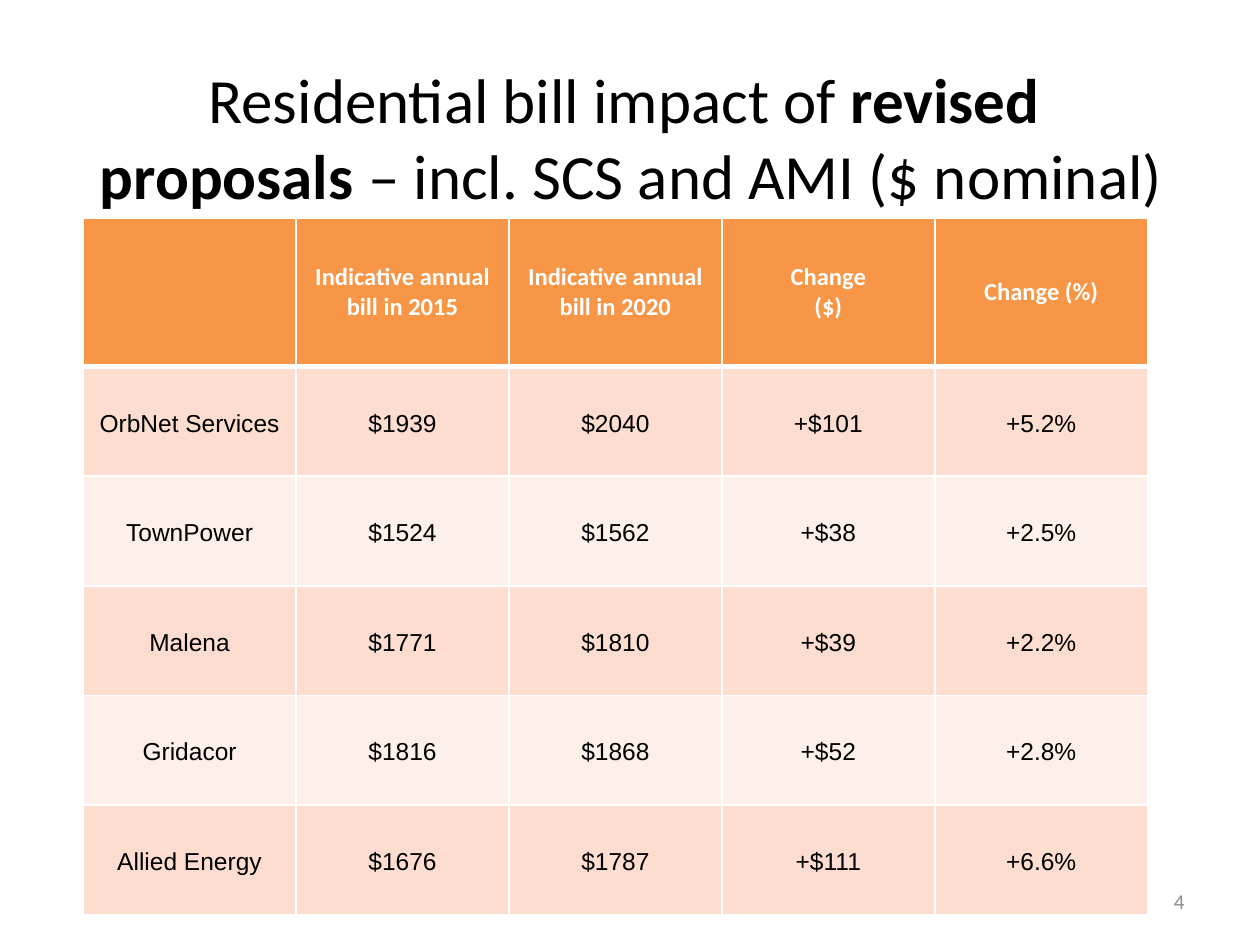
from lxml.etree import SubElement
from pptx import Presentation
from pptx.dml.color import RGBColor
from pptx.enum.text import MSO_ANCHOR as Anchor, PP_ALIGN as Align
from pptx.oxml.ns import qn
from pptx.util import Inches, Pt

COLORS = {
    "text": "000000",
    "white": "FFFFFF",
    "header": "F79646",
    "band_dark": "FCDDCF",
    "band_light": "FDEFE9",
    "page_number": "8C8C8C",
}


def style_paragraph(paragraph, size, font_name, color, align, bold=None):
    paragraph.alignment = align
    font = paragraph.font
    font.size = Pt(size)
    font.name = font_name
    font.bold = bold
    font.color.rgb = RGBColor.from_string(COLORS[color])


def fill_cell(cell, color, bottom_width):
    """Set white borders and a solid fill; the schema wants borders first."""
    properties = cell._tc.get_or_add_tcPr()
    for side, width in (("L", 1), ("R", 1), ("T", 1), ("B", bottom_width)):
        line = SubElement(properties, qn(f"a:ln{side}"), w=str(Pt(width)))
        solid = SubElement(line, qn("a:solidFill"))
        SubElement(solid, qn("a:srgbClr"), val=COLORS["white"])
    cell.fill.solid()
    cell.fill.fore_color.rgb = RGBColor.from_string(COLORS[color])


presentation = Presentation()
presentation.slide_width = Inches(10)
presentation.slide_height = Inches(7.5)
slide = presentation.slides.add_slide(presentation.slide_layouts[6])

# Title, raised by its bottom margin to sit above the table
title = slide.shapes.add_textbox(Inches(0.51), Inches(0.76), Inches(9), Inches(1.25))
title_frame = title.text_frame
title_frame.word_wrap = True
title_frame.vertical_anchor = Anchor.MIDDLE
title_frame.margin_bottom = Inches(0.66)
paragraph = title_frame.paragraphs[0]
style_paragraph(paragraph, 36, "Calibri", "text", Align.CENTER)
paragraph.add_run().text = "Residential bill impact of "
for line in ("revised ", "proposals "):
    run = paragraph.add_run()
    run.text = line
    run.font.bold = True
    if line == "revised ":
        paragraph.add_line_break()
paragraph.add_run().text = "– incl. SCS and AMI ($ nominal)"

# Bill table
rows = [
    ("", "Indicative annual bill in 2015", "Indicative annual bill in 2020",
     "Change\n($)", "Change (%)"),
    ("OrbNet Services", "$1939", "$2040", "+$101", "+5.2%"),
    ("TownPower", "$1524", "$1562", "+$38", "+2.5%"),
    ("Malena", "$1771", "$1810", "+$39", "+2.2%"),
    ("Gridacor", "$1816", "$1868", "+$52", "+2.8%"),
    ("Allied Energy", "$1676", "$1787", "+$111", "+6.6%"),
]
table = slide.shapes.add_table(
    len(rows), len(rows[0]), Inches(0.66), Inches(1.73), Inches(8.46), Inches(5.52)
).table
for column in table.columns:
    column.width = Inches(1.69)

for row_index, values in enumerate(rows):
    is_header = row_index == 0
    table.rows[row_index].height = Inches(1.18 if is_header else 0.87)
    if is_header:
        fill = "header"
    else:
        fill = "band_dark" if row_index % 2 else "band_light"
    for column_index, value in enumerate(values):
        cell = table.cell(row_index, column_index)
        cell.text = value
        cell.vertical_anchor = Anchor.MIDDLE
        fill_cell(cell, fill, 3 if is_header else 1)
        if not is_header:
            cell.margin_left = cell.margin_right = Inches(0.07)
            cell.margin_top = cell.margin_bottom = 0
        for paragraph in cell.text_frame.paragraphs:
            if is_header:
                style_paragraph(paragraph, 14, "Calibri", "white", Align.CENTER, True)
            else:
                style_paragraph(paragraph, 14, "Arial", "text", Align.CENTER, False)
                paragraph.line_spacing = 1.15
                paragraph.space_before = Pt(6)
                paragraph.space_after = Pt(4)

# Page number
number = slide.shapes.add_textbox(Inches(7.17), Inches(6.95), Inches(2.33), Inches(0.4))
number_frame = number.text_frame
number_frame.word_wrap = True
number_frame.vertical_anchor = Anchor.MIDDLE
number_frame.text = "4"
style_paragraph(number_frame.paragraphs[0], 12, "Calibri", "page_number", Align.RIGHT)

presentation.save("out.pptx")
